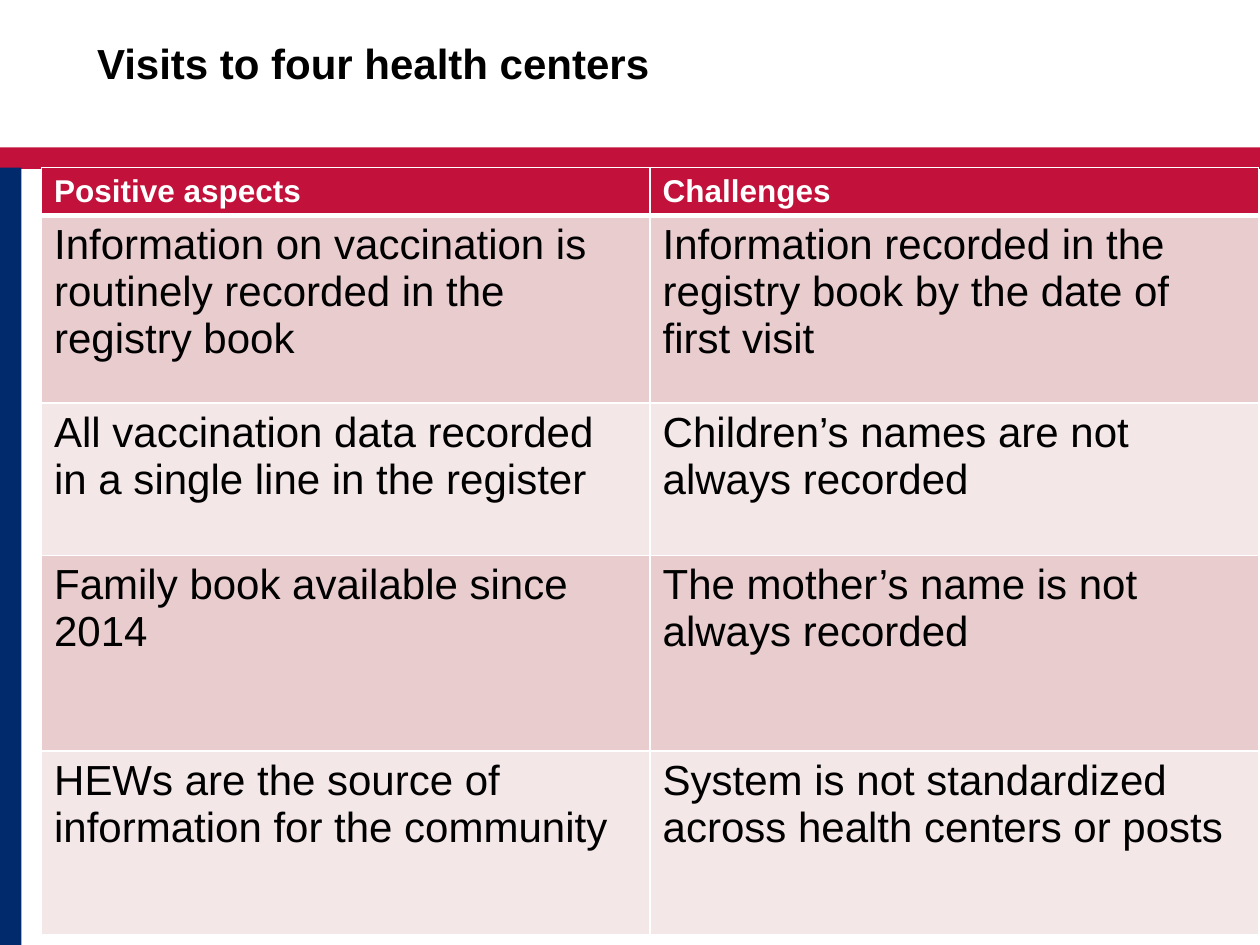
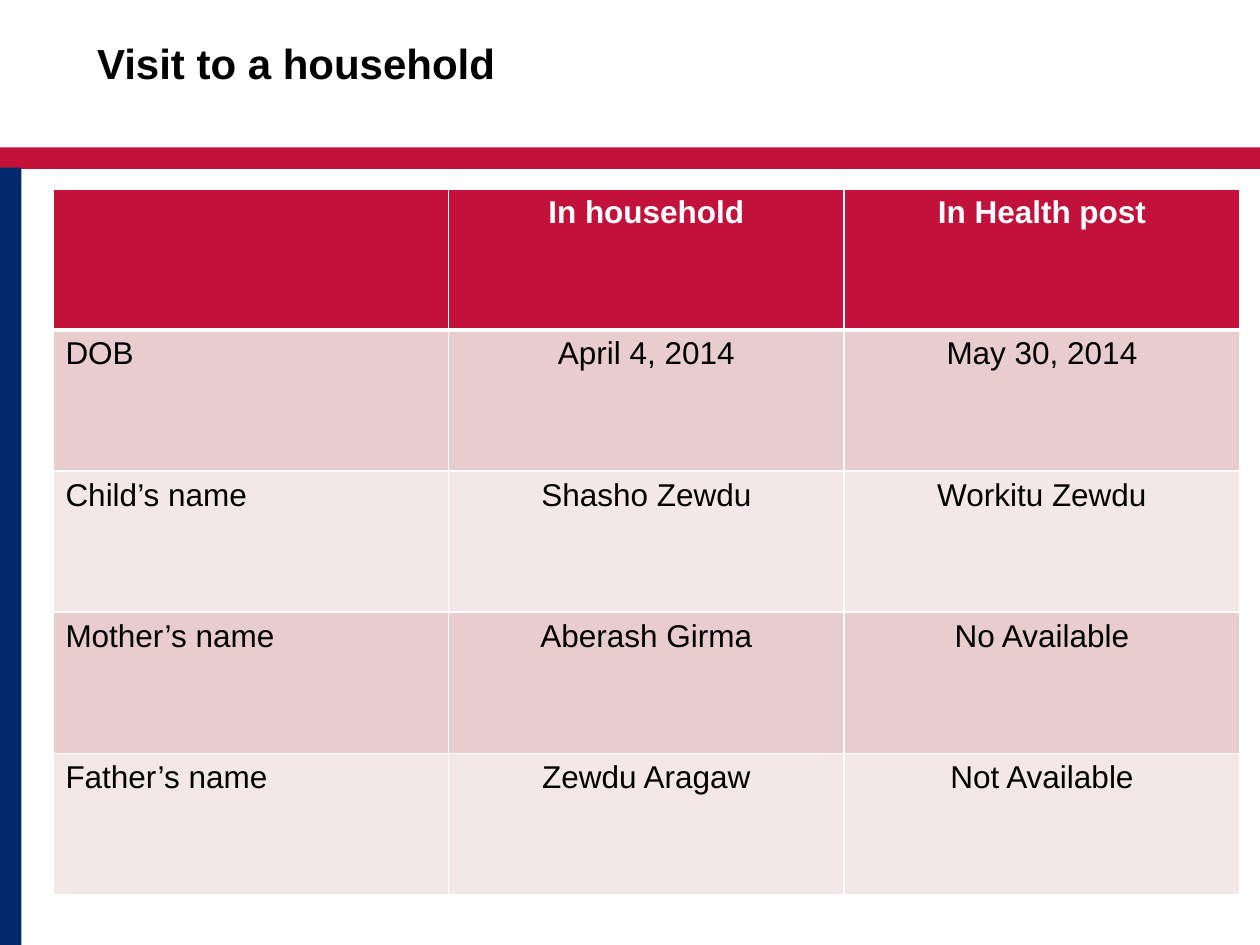
"""Build two slides that report on visits to health centers and a household."""
from dataclasses import dataclass

from lxml.etree import SubElement
from pptx import Presentation
from pptx.dml.color import RGBColor
from pptx.enum.shapes import MSO_SHAPE as Shape
from pptx.enum.text import MSO_ANCHOR as Anchor, PP_ALIGN as Align
from pptx.oxml.ns import qn
from pptx.util import Inches, Pt

FONT = "Arial"
RED, NAVY, WHITE, BLACK = "C2113A", "002A6C", "FFFFFF", "000000"
ROW_FILLS = ("F4E7E8", "E9CCCE")
TITLE_ONLY = 5


@dataclass(frozen=True)
class Band:
    left: float
    top: float
    width: float
    height: float
    color: str


@dataclass(frozen=True)
class TableSlide:
    title: str
    left: float
    top: float
    column_width: float
    row_heights: tuple[float, ...]
    body_size: int
    value_align: Align
    rows: tuple[tuple[str, ...], ...]


BANDS = (
    Band(0, 1.17, 10, 0.17, RED),
    Band(0, 1.33, 0.17, 6.17, NAVY),
)

TABLE_SLIDES = (
    TableSlide(
        "Visits to four health centers", 0.33, 1.33, 4.83,
        (0.38, 1.49, 1.21, 1.55, 1.46), 24, Align.LEFT,
        (
            ("Positive aspects", "Challenges"),
            ("Information on vaccination is routinely recorded in the registry book",
             "Information recorded in the registry book by the date of first visit"),
            ("All vaccination data recorded in a single line in the register",
             "Children’s names are not always recorded"),
            ("Family book available since 2014",
             "The mother’s name is not always recorded"),
            ("HEWs are the source of information for the community",
             "System is not standardized across health centers or posts"),
        ),
    ),
    TableSlide(
        "Visit to a household", 0.42, 1.5, 3.14, (1.12,) * 5, 18, Align.CENTER,
        (
            ("", "In household", "In Health post"),
            ("DOB", "April 4, 2014", "May 30, 2014"),
            ("Child’s name", "Shasho Zewdu", "Workitu Zewdu"),
            ("Mother’s name", "Aberash Girma", "No Available"),
            ("Father’s name", "Zewdu Aragaw", "Not Available"),
        ),
    ),
)


def rgb(color: str) -> RGBColor:
    return RGBColor.from_string(color)


def format_text(text_frame, size: int, color: str, bold: bool, align: Align) -> None:
    for paragraph in text_frame.paragraphs:
        paragraph.alignment = align
        for run in paragraph.runs:
            run.font.name = FONT
            run.font.size = Pt(size)
            run.font.bold = bold
            run.font.color.rgb = rgb(color)


def add_band(slide, band: Band) -> None:
    shape = slide.shapes.add_shape(
        Shape.RECTANGLE, Inches(band.left), Inches(band.top),
        Inches(band.width), Inches(band.height))
    shape.shadow.inherit = False
    shape.fill.solid()
    shape.fill.fore_color.rgb = rgb(band.color)
    shape.line.fill.background()


def set_title(slide, text: str) -> None:
    title = slide.shapes.title
    title.left, title.top = Inches(0.67), Inches(0.25)
    title.width, title.height = Inches(8.5), Inches(0.67)
    title.text_frame.text = text
    title.text_frame.vertical_anchor = Anchor.TOP
    format_text(title.text_frame, 24, BLACK, True, Align.LEFT)


def set_borders(cell, top: int, bottom: int) -> None:
    properties = cell._tc.get_or_add_tcPr()
    for side, width in (("L", 1), ("R", 1), ("T", top), ("B", bottom)):
        line = SubElement(properties, qn(f"a:ln{side}"), w=str(Pt(width)))
        fill = SubElement(line, qn("a:solidFill"))
        SubElement(fill, qn("a:srgbClr"), val=WHITE)


def fill_cell(cell, content: TableSlide, row: int, column: int) -> None:
    is_header = row == 0
    set_borders(cell, 3 if row == 1 else 1, 3 if is_header else 1)
    cell.fill.solid()
    cell.fill.fore_color.rgb = rgb(RED if is_header else ROW_FILLS[row % 2])
    cell.text_frame.text = content.rows[row][column]
    format_text(
        cell.text_frame,
        18 if is_header else content.body_size,
        WHITE if is_header else BLACK,
        is_header,
        content.value_align if column else Align.LEFT)


def add_content_table(slide, content: TableSlide) -> None:
    column_count = len(content.rows[0])
    table = slide.shapes.add_table(
        len(content.rows), column_count,
        Inches(content.left), Inches(content.top),
        Inches(content.column_width * column_count),
        Inches(sum(content.row_heights))).table
    for column in table.columns:
        column.width = Inches(content.column_width)
    for row, height in enumerate(content.row_heights):
        table.rows[row].height = Inches(height)
        for column in range(column_count):
            fill_cell(table.cell(row, column), content, row, column)


def main() -> None:
    presentation = Presentation()
    presentation.slide_width, presentation.slide_height = Inches(10), Inches(7.5)
    for content in TABLE_SLIDES:
        slide = presentation.slides.add_slide(presentation.slide_layouts[TITLE_ONLY])
        for band in BANDS:
            add_band(slide, band)
        set_title(slide, content.title)
        add_content_table(slide, content)
    presentation.save("out.pptx")


if __name__ == "__main__":
    main()
